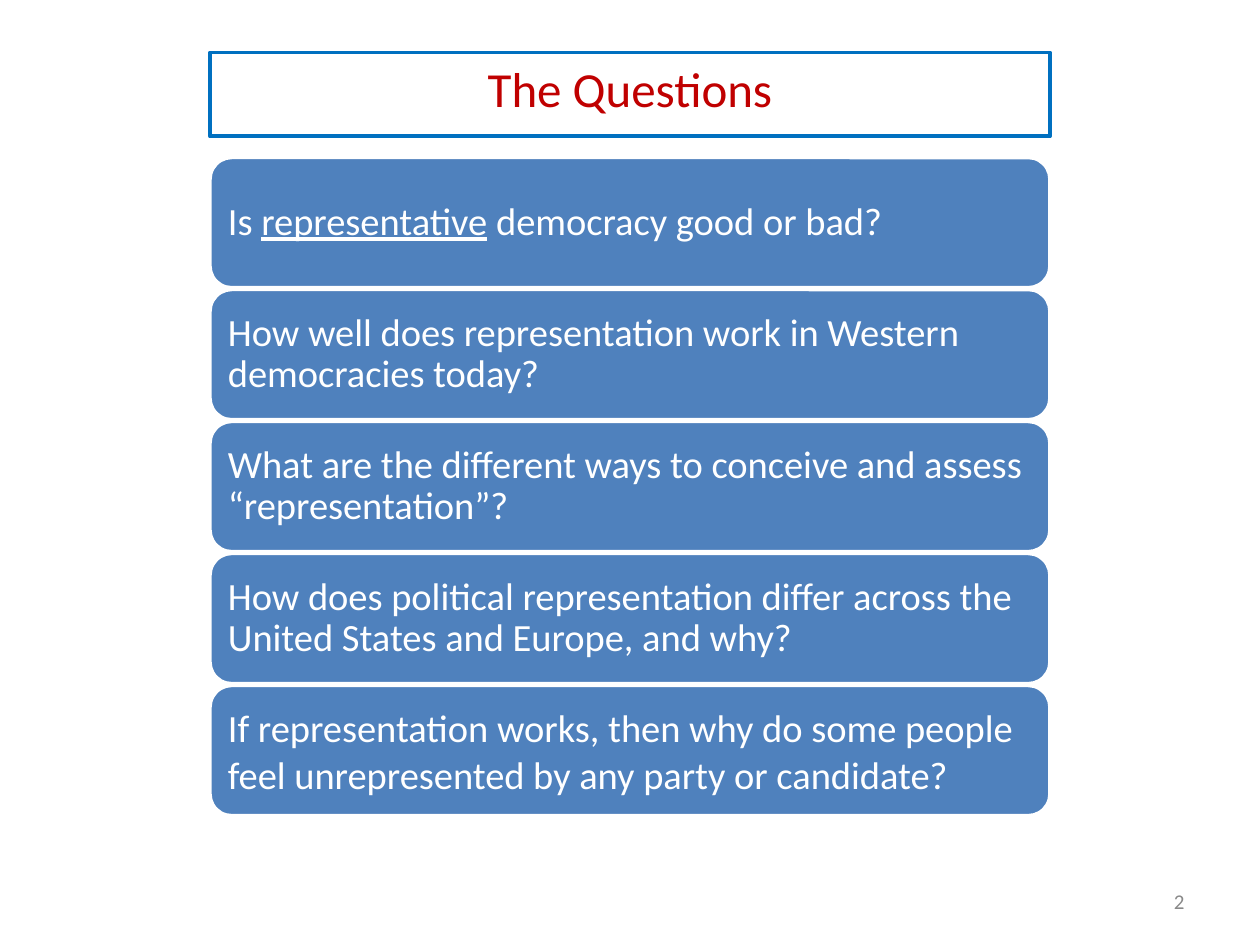
from pptx import Presentation
from pptx.dml.color import RGBColor
from pptx.enum.shapes import MSO_SHAPE
from pptx.enum.text import MSO_ANCHOR, MSO_AUTO_SIZE, PP_ALIGN
from pptx.util import Pt

ROUNDED = MSO_SHAPE.ROUNDED_RECTANGLE
TOP, MIDDLE = MSO_ANCHOR.TOP, MSO_ANCHOR.MIDDLE
LEFT, CENTER, RIGHT = PP_ALIGN.LEFT, PP_ALIGN.CENTER, PP_ALIGN.RIGHT
NO_AUTOFIT = MSO_AUTO_SIZE.NONE

WHITE = RGBColor(0xFF, 0xFF, 0xFF)
RED = RGBColor(0xC0, 0x00, 0x00)
BORDER_BLUE = RGBColor(0x00, 0x70, 0xC0)
PANEL_BLUE = RGBColor(0x4F, 0x81, 0xBD)
GRAY = RGBColor(0x89, 0x89, 0x89)

# Each question is a list of (text, underlined) runs
QUESTIONS = [
    [("Is ", False), ("representative", True), (" democracy good or bad?", False)],
    [("How well does representation work in Western democracies today?", False)],
    [("What are the different ways to conceive and assess “representation”?", False)],
    [("How does political representation differ across the United States "
      "and Europe, and why?", False)],
    [("If representation works, then why do some people feel unrepresented "
      "by any party or candidate?", False)],
]

# Column shared by the title and the questions, in points
COLUMN_LEFT, COLUMN_WIDTH = 120, 480
QUESTION_TOP, QUESTION_HEIGHT, QUESTION_PITCH = 90, 74.4, 75.42


class SlideBuilder:
    font_name = "Calibri"

    def __init__(self, slide):
        self.slide = slide

    def add_text(self, shape, runs, size, color, alignment, anchor, line_spacing=1.0):
        frame = shape.text_frame
        frame.word_wrap = True
        frame.auto_size = NO_AUTOFIT
        frame.vertical_anchor = anchor
        paragraph = frame.paragraphs[0]
        paragraph.alignment = alignment
        paragraph.line_spacing = line_spacing
        paragraph.space_before = Pt(0)
        for text, underlined in runs:
            run = paragraph.add_run()
            run.text = text
            run.font.name = self.font_name
            run.font.size = Pt(size)
            run.font.color.rgb = color
            if underlined:
                run.font.underline = True

    def title(self, text, left, top, width, height):
        shape = self.slide.shapes.title
        shape.left, shape.top = Pt(left), Pt(top)
        shape.width, shape.height = Pt(width), Pt(height)
        shape.line.color.rgb = BORDER_BLUE
        shape.line.width = Pt(2.25)
        self.add_text(shape, [(text, False)], 28, RED, CENTER, TOP)

    def question(self, runs, left, top, width, height, line_spacing):
        shape = self.slide.shapes.add_shape(
            ROUNDED, Pt(left), Pt(top), Pt(width), Pt(height))
        shape.shadow.inherit = False
        shape.fill.solid()
        shape.fill.fore_color.rgb = PANEL_BLUE
        shape.line.color.rgb = WHITE
        shape.line.width = Pt(2)
        frame = shape.text_frame
        frame.margin_left = frame.margin_right = Pt(6.6)
        frame.margin_top = frame.margin_bottom = Pt(6.6)
        self.add_text(shape, runs, 22, WHITE, LEFT, MIDDLE, line_spacing)

    def page_number(self, text, left, top, width, height):
        shape = self.slide.shapes.add_textbox(
            Pt(left), Pt(top), Pt(width), Pt(height))
        self.add_text(shape, [(text, False)], 12, GRAY, RIGHT, MIDDLE)


def main():
    presentation = Presentation()
    presentation.slide_width, presentation.slide_height = Pt(720), Pt(540)
    title_only = presentation.slide_layouts[5]
    builder = SlideBuilder(presentation.slides.add_slide(title_only))

    # Title
    builder.title("The Questions", COLUMN_LEFT, 30, COLUMN_WIDTH, 48)

    # Stack of questions; the last one is set with full line spacing
    for index, runs in enumerate(QUESTIONS):
        is_last = index == len(QUESTIONS) - 1
        builder.question(runs, COLUMN_LEFT, QUESTION_TOP + index * QUESTION_PITCH,
                         COLUMN_WIDTH, QUESTION_HEIGHT, 1.0 if is_last else 0.9)

    # Page number
    builder.page_number("2", 516, 500.5, 168, 28.75)

    presentation.save("out.pptx")


if __name__ == "__main__":
    main()
